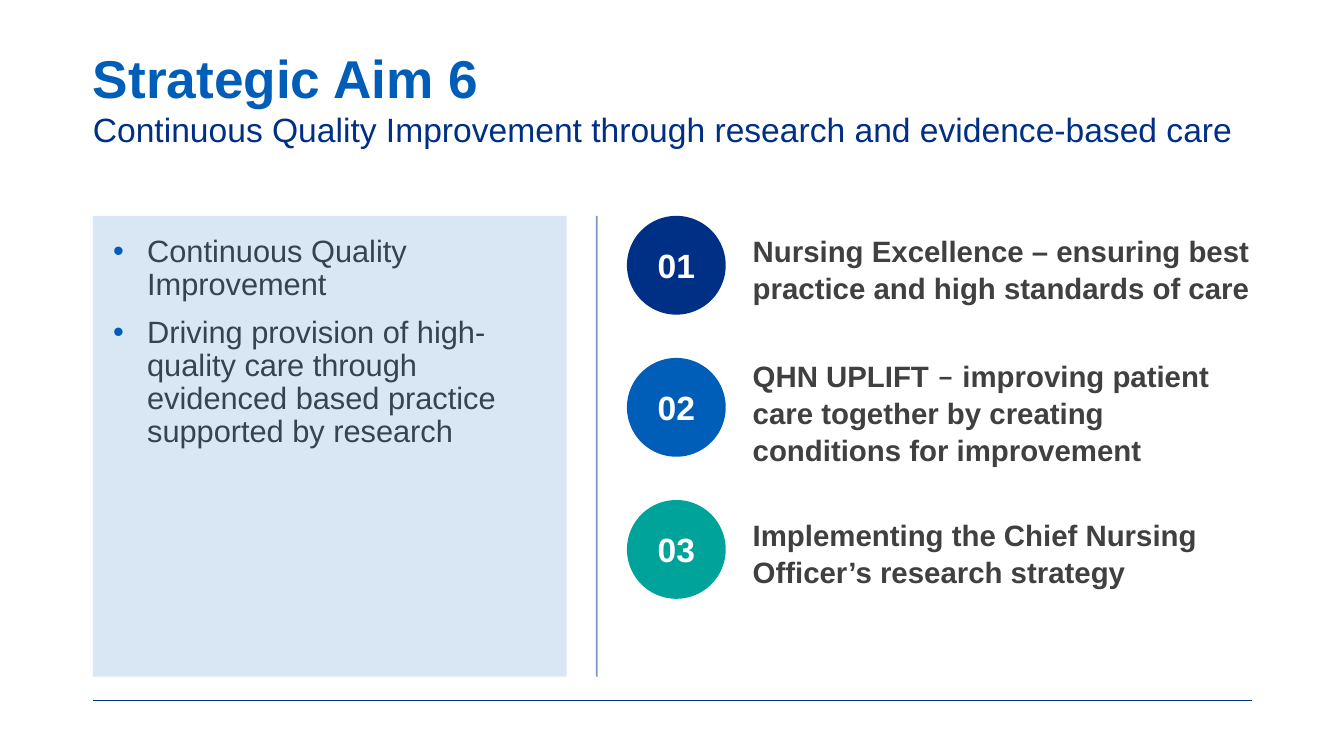
from lxml import etree
from pptx import Presentation
from pptx.dml.color import RGBColor
from pptx.enum.shapes import MSO_CONNECTOR, MSO_SHAPE
from pptx.enum.text import MSO_ANCHOR, PP_ALIGN
from pptx.oxml.ns import qn
from pptx.util import Cm, Pt

LINE = MSO_CONNECTOR.STRAIGHT
RECT, OVAL = MSO_SHAPE.RECTANGLE, MSO_SHAPE.OVAL
TOP, MIDDLE = MSO_ANCHOR.TOP, MSO_ANCHOR.MIDDLE
CENTER, LEFT = PP_ALIGN.CENTER, PP_ALIGN.LEFT

NAVY = RGBColor(0x00, 0x2F, 0x86)
BLUE = RGBColor(0x00, 0x5E, 0xB8)
TEAL = RGBColor(0x00, 0xA3, 0x99)
GREY = RGBColor(0x40, 0x40, 0x40)
WHITE = RGBColor(0xFF, 0xFF, 0xFF)
FONT, DASH_FONT = "Arial", "Lato"

# Content
TITLE = "Strategic Aim 6"
SUBTITLE = "Continuous Quality Improvement through research and evidence-based care"
BULLETS = [
    "Continuous Quality Improvement",
    "Driving provision of high-quality care through evidenced based practice "
    "supported by research",
]
# Colour, line count, runs of text with their font
STEPS = [
    (NAVY, 2, [("Nursing Excellence – ensuring best practice and high "
                "standards of care", FONT)]),
    (BLUE, 3, [("QHN UPLIFT ", FONT), ("–", DASH_FONT),
               (" improving patient care together by creating conditions "
                "for improvement", FONT)]),
    (TEAL, 2, [("Implementing the Chief Nursing Officer’s research strategy",
                FONT)]),
]

# Layout in centimetres
EDGE, WIDTH = 2.34, 29.21
BODY_TOP, BODY_H, PANEL_W = 5.44, 11.61, 11.94
RULE_X, FOOT_Y = 15.04, 17.65
DISC_X, DISC, PITCH = 15.8, 2.49, 3.58
TEXT_X, ROW_H = 18.97, 0.85


def set_font(font, size, color, bold=False, name=FONT):
    font.name, font.size, font.bold = name, Pt(size), bold
    font.color.rgb = color


def set_frame(frame, pad=0, anchor=TOP):
    frame.word_wrap = True
    frame.vertical_anchor = anchor
    frame.margin_left = frame.margin_right = Cm(pad)
    frame.margin_top = frame.margin_bottom = Cm(pad)


def set_alpha(fill, percent):
    tint = fill._xPr.find(".//" + qn("a:srgbClr"))
    etree.SubElement(tint, qn("a:alpha"), val=str(percent * 1000))


def add_box(x, y, w, h, pad=0):
    box = slide.shapes.add_textbox(Cm(x), Cm(y), Cm(w), Cm(h))
    set_frame(box.text_frame, pad)
    return box.text_frame


def add_form(kind, x, y, w, h, color):
    form = slide.shapes.add_shape(kind, Cm(x), Cm(y), Cm(w), Cm(h))
    form.shadow.inherit = False
    form.fill.solid()
    form.fill.fore_color.rgb = color
    form.line.fill.background()
    return form


def add_rule(x1, y1, x2, y2, width):
    rule = slide.shapes.add_connector(LINE, Cm(x1), Cm(y1), Cm(x2), Cm(y2))
    rule.line.color.rgb = NAVY
    rule.line.width = Pt(width)
    etree.SubElement(rule._element.spPr, qn("a:effectLst"))
    return rule


def add_bullet(para):
    props = para._p.get_or_add_pPr()
    props.set("marL", str(Cm(0.86)))
    props.set("indent", str(-Cm(0.86)))
    color = etree.SubElement(props, qn("a:buClr"))
    etree.SubElement(color, qn("a:srgbClr"), val=str(BLUE))
    etree.SubElement(props, qn("a:buFont"), typeface=FONT)
    etree.SubElement(props, qn("a:buChar"), char="•")


deck = Presentation()
deck.slide_width, deck.slide_height = Cm(33.87), Cm(19.05)
slide = deck.slides.add_slide(deck.slide_layouts[5])

# Footer rule
add_rule(EDGE, FOOT_Y, EDGE + WIDTH, FOOT_Y, 1)

# Title and subtitle
title = slide.shapes.title
title.left, title.top, title.width, title.height = (
    Cm(EDGE), Cm(1.02), Cm(WIDTH), Cm(3.68))
set_frame(title.text_frame)
title.text_frame.margin_top = Cm(0.12)
para = title.text_frame.paragraphs[0]
para.alignment = LEFT
run = para.add_run()
run.text = TITLE
set_font(run.font, 38, BLUE, True)
para.add_line_break()
run = para.add_run()
run.text = SUBTITLE
set_font(run.font, 24, NAVY)

# Bullets under the tinted panel
frame = add_box(EDGE, BODY_TOP, PANEL_W, 11, 0.51)
for i, text in enumerate(BULLETS):
    para = frame.add_paragraph() if i else frame.paragraphs[0]
    para.text = text
    para.line_spacing = 0.9
    if i:
        para.space_before = Pt(10)
    add_bullet(para)
    set_font(para.font, 22, GREY)
panel = add_form(RECT, EDGE, BODY_TOP, PANEL_W, BODY_H, BLUE)
set_alpha(panel.fill, 15)

# Divider
rule = add_rule(RULE_X, BODY_TOP, RULE_X, BODY_TOP + BODY_H, 1.25)
set_alpha(rule.line.fill, 50)

# Numbered steps
for i, (color, rows, runs) in enumerate(STEPS):
    y = BODY_TOP + i * PITCH
    disc = add_form(OVAL, DISC_X, y, DISC, DISC, color)
    set_frame(disc.text_frame, 0.13, MIDDLE)
    para = disc.text_frame.paragraphs[0]
    para.text = f"{i + 1:02d}"
    para.alignment = CENTER
    set_font(para.font, 24, WHITE, True)

    high = rows * ROW_H
    frame = add_box(TEXT_X, y + (DISC - high) / 2, EDGE + WIDTH - TEXT_X, high)
    para = frame.paragraphs[0]
    para.line_spacing = 1.05
    for text, name in runs:
        run = para.add_run()
        run.text = text
        set_font(run.font, 21, GREY, True, name)

deck.save("out.pptx")
